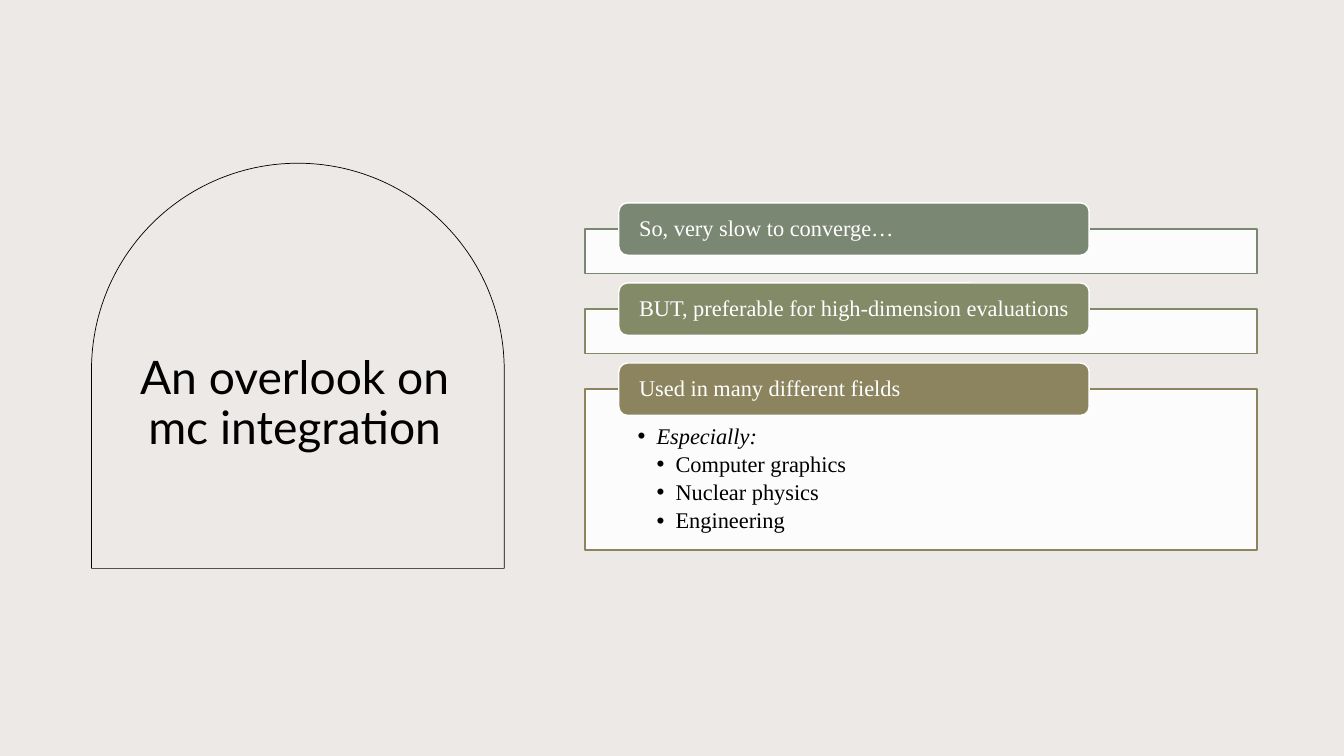
import math

import pptx
import pptx.util
import pptx.dml.color
import pptx.enum.shapes
import pptx.enum.text
import pptx.oxml.ns
import lxml.etree

Pt = pptx.util.Pt
RGBColor = pptx.dml.color.RGBColor
Shapes = pptx.enum.shapes.MSO_SHAPE
Align = pptx.enum.text.PP_ALIGN
Anchor = pptx.enum.text.MSO_ANCHOR
qn = pptx.oxml.ns.qn

BACKGROUND = RGBColor(0xED, 0xE9, 0xE7)
BLACK = RGBColor(0, 0, 0)
WHITE = RGBColor(0xFF, 0xFF, 0xFF)
SAGE = RGBColor(0x7A, 0x87, 0x73)
OLIVE = RGBColor(0x82, 0x8A, 0x68)
KHAKI = RGBColor(0x8C, 0x84, 0x5E)


class SlideBuilder:
    title_font = "Lato"
    body_font = "Times New Roman"
    title_size = 33
    body_size = 16
    line_spacing = 0.9
    bullet_indent = 13.6

    def __init__(self, slide):
        self.slide = slide
        slide.background.fill.solid()
        slide.background.fill.fore_color.rgb = BACKGROUND

    def outline(self, shape, color, width):
        shape.shadow.inherit = False
        shape.line.color.rgb = color
        shape.line.width = Pt(width)

    def frame(self, shape, anchor, insets):
        frame = shape.text_frame
        frame.word_wrap = True
        frame.vertical_anchor = anchor
        frame.margin_left, frame.margin_top, frame.margin_right, frame.margin_bottom = map(Pt, insets)
        return frame

    def text_run(self, paragraph, text, font, size, color, align=Align.LEFT, italic=False):
        paragraph.alignment = align
        paragraph.line_spacing = self.line_spacing
        run = paragraph.add_run()
        run.text = text
        run.font.name = font
        run.font.size = Pt(size)
        run.font.color.rgb = color
        run.font.italic = italic

    def title(self, text, left, top, width, height):
        box = self.slide.shapes.add_textbox(Pt(left), Pt(top), Pt(width), Pt(height))
        frame = self.frame(box, Anchor.MIDDLE, (7.2, 3.6, 7.2, 3.6))
        self.text_run(frame.paragraphs[0], text, self.title_font, self.title_size, BLACK, Align.CENTER)

    def arch(self, left, top, radius, bottom, steps=120):
        center_x, center_y = left + radius, top + radius
        angles = [math.pi * (1 + step / steps) for step in range(steps + 1)]
        curve = [(Pt(center_x + radius * math.cos(a)), Pt(center_y + radius * math.sin(a))) for a in angles]
        builder = self.slide.shapes.build_freeform(Pt(left), Pt(bottom))
        builder.add_line_segments(curve + [(Pt(left + 2 * radius), Pt(bottom))], close=True)
        arch = builder.convert_to_shape()
        arch.fill.background()
        self.outline(arch, BLACK, 0.5)

    def panel(self, left, top, width, height, color, bullets):
        panel = self.slide.shapes.add_shape(Shapes.RECTANGLE, Pt(left), Pt(top), Pt(width), Pt(height))
        panel.fill.solid()
        panel.fill.fore_color.rgb = WHITE
        white = panel._element.spPr.find(qn("a:solidFill"))[0]
        lxml.etree.SubElement(white, qn("a:alpha")).set("val", "90000")
        self.outline(panel, color, 1)
        if bullets:
            frame = self.frame(panel, Anchor.TOP, (37.4, 25.9, 37.4, 8.6))
            for index, (level, text, italic) in enumerate(bullets):
                paragraph = frame.add_paragraph() if index else frame.paragraphs[0]
                self.bullet(paragraph, level, text, italic)

    def bullet(self, paragraph, level, text, italic):
        self.text_run(paragraph, text, self.body_font, self.body_size, BLACK, italic=italic)
        paragraph.level = level
        paragraph.space_before = Pt(0)
        paragraph.space_after = Pt(2.8)
        properties = paragraph._p.get_or_add_pPr()
        properties.set("marL", str(Pt(self.bullet_indent * level)))
        properties.set("indent", str(-Pt(self.bullet_indent)))
        lxml.etree.SubElement(properties, qn("a:buFont")).set("typeface", "Arial")
        lxml.etree.SubElement(properties, qn("a:buChar")).set("char", "•")

    def heading(self, text, left, top, width, height, color):
        heading = self.slide.shapes.add_shape(
            Shapes.ROUNDED_RECTANGLE, Pt(left), Pt(top), Pt(width), Pt(height))
        heading.fill.solid()
        heading.fill.fore_color.rgb = color
        self.outline(heading, WHITE, 1)
        frame = self.frame(heading, Anchor.MIDDLE, (12.7, 0, 12.7, 0))
        self.text_run(frame.paragraphs[0], text, self.body_font, self.body_size, WHITE)


def main():
    presentation = pptx.Presentation()
    presentation.slide_width = Pt(960)
    presentation.slide_height = Pt(540)
    overview = SlideBuilder(presentation.slides.add_slide(presentation.slide_layouts[6]))

    overview.title("An overlook on mc integration", 84, 195, 253, 188)
    overview.arch(65.4, 116.6, 147.4, 406)

    fields = [
        (1, "Especially:", True),
        (2, "Computer graphics", False),
        (2, "Nuclear physics", False),
        (2, "Engineering", False),
    ]
    points = [
        ("So, very slow to converge…", SAGE, 32, []),
        ("BUT, preferable for high-dimension evaluations", OLIVE, 32, []),
        ("Used in many different fields", KHAKI, 115, fields),
    ]
    first_top, pitch, overlap = 163.5, 57.2, 18.6
    for index, (text, color, height, bullets) in enumerate(points):
        top = first_top + index * pitch
        overview.panel(418, top, 480, height, color, bullets)
        overview.heading(text, 442, top - overlap, 336, 37.4, color)

    presentation.save("out.pptx")


if __name__ == "__main__":
    main()
